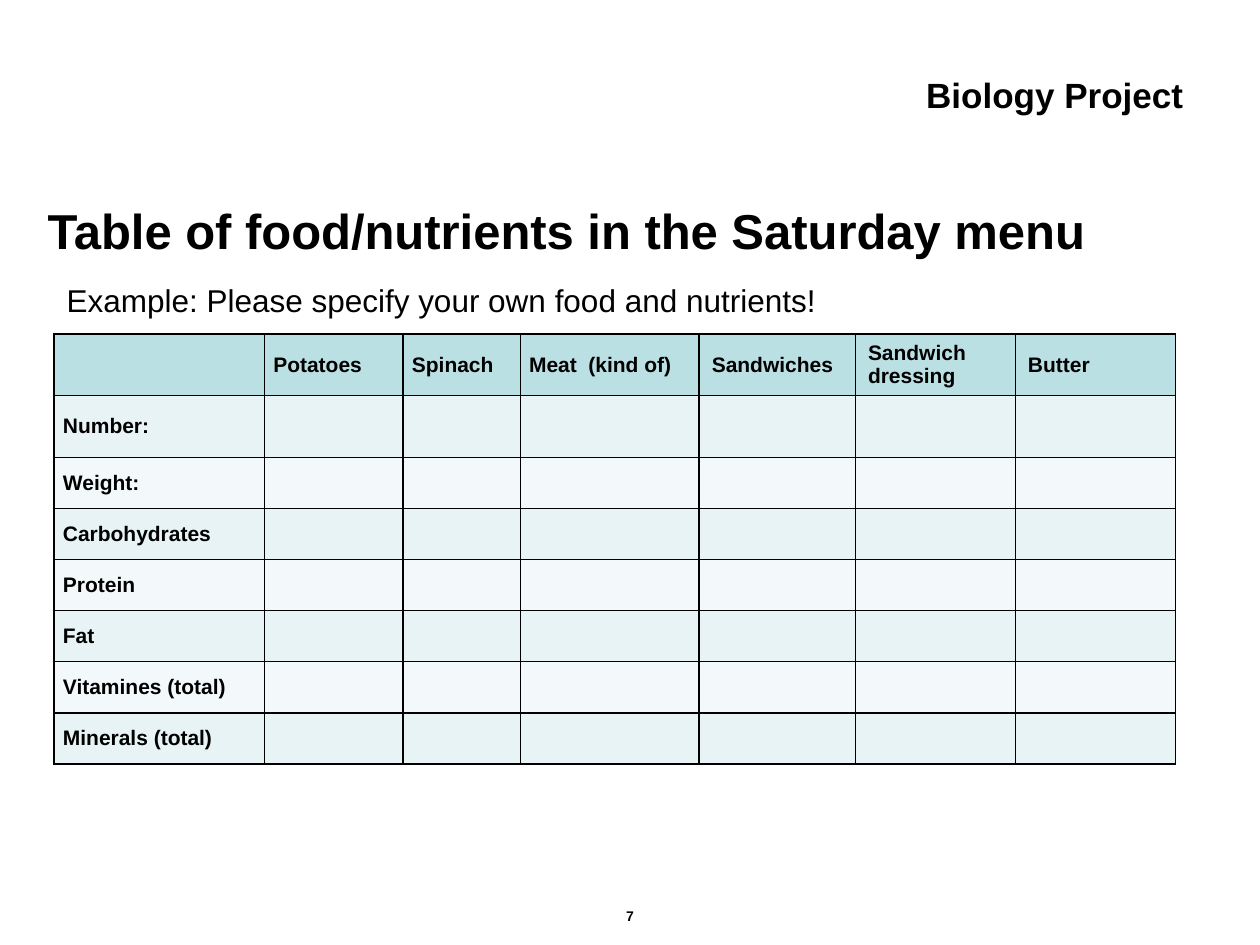
from dataclasses import dataclass

from lxml.etree import SubElement
from pptx import Presentation
from pptx.dml.color import RGBColor
from pptx.enum.text import MSO_ANCHOR, PP_ALIGN
from pptx.oxml.ns import qn
from pptx.util import Inches, Pt

SLIDE_WIDTH, SLIDE_HEIGHT = Inches(10), Inches(7.5)
FONT = "Arial"
BLACK = RGBColor(0x00, 0x00, 0x00)
HEADER_FILL = RGBColor(0xBB, 0xE0, 0xE3)
BAND_FILLS = (RGBColor(0xF3, 0xF9, 0xFA), RGBColor(0xE7, 0xF3, 0xF4))

FOODS = ("", "Potatoes", "Spinach", "Meat  (kind of)", "Sandwiches",
         "Sandwich dressing", "Butter")
NUTRIENTS = ("Number:", "Weight:", "Carbohydrates", "Protein", "Fat",
             "Vitamines (total)", "Minerals (total)")
COLUMN_WIDTHS = (1.67, 1.1, 0.93, 1.42, 1.24, 1.27, 1.27)
ROW_HEIGHTS = (0.49,) * 2 + (0.4,) * 6
NARROW_MARGIN_COLUMNS = 4


@dataclass
class Label:
    """A line of text; the box is given as percentages of the slide."""
    text: str
    left: float
    top: float
    width: float
    height: float
    size: int
    bold: bool = True
    align: PP_ALIGN = PP_ALIGN.LEFT
    anchor: MSO_ANCHOR = MSO_ANCHOR.TOP


LABELS = (
    Label("Table of food/nutrients in the Saturday menu",
          2.8, 18.53, 89.7, 11.6, 28, anchor=MSO_ANCHOR.MIDDLE),
    Label("Biology Project", 28, 7.07, 66.9, 5.2, 20, align=PP_ALIGN.RIGHT),
    Label("7", 5.1, 93.9, 89.8, 6.1, 8, align=PP_ALIGN.CENTER,
          anchor=MSO_ANCHOR.MIDDLE),
    Label("Example: Please specify your own food and nutrients!",
          4.3, 29.07, 88.2, 5.33, 18, bold=False),
)


def style_text(text_frame, size: int, bold: bool) -> None:
    for paragraph in text_frame.paragraphs:
        for run in paragraph.runs:
            run.font.name = FONT
            run.font.size = Pt(size)
            run.font.bold = bold
            run.font.color.rgb = BLACK


def add_label(slide, label: Label) -> None:
    shape = slide.shapes.add_textbox(
        int(SLIDE_WIDTH * label.left / 100), int(SLIDE_HEIGHT * label.top / 100),
        int(SLIDE_WIDTH * label.width / 100), int(SLIDE_HEIGHT * label.height / 100))
    text_frame = shape.text_frame
    text_frame.word_wrap = True
    text_frame.vertical_anchor = label.anchor
    text_frame.text = label.text
    text_frame.paragraphs[0].alignment = label.align
    style_text(text_frame, label.size, label.bold)


def add_borders(cell) -> None:
    """Black one-point lines on all sides; call before setting the fill."""
    properties = cell._tc.get_or_add_tcPr()
    for side in ("a:lnL", "a:lnR", "a:lnT", "a:lnB"):
        line = SubElement(properties, qn(side), w=str(Pt(1)))
        fill = SubElement(line, qn("a:solidFill"))
        SubElement(fill, qn("a:srgbClr"), val=str(BLACK))


def fill_cell(cell, text: str, color: RGBColor, narrow: bool) -> None:
    add_borders(cell)
    cell.fill.solid()
    cell.fill.fore_color.rgb = color
    cell.vertical_anchor = MSO_ANCHOR.MIDDLE
    if not text:
        return
    cell.text_frame.text = text
    style_text(cell.text_frame, 12, True)
    if narrow:
        cell.margin_left = cell.margin_right = Inches(0.07)
        cell.margin_top = cell.margin_bottom = 0


def add_nutrient_table(slide) -> None:
    rows = [FOODS] + [(name,) + ("",) * (len(FOODS) - 1) for name in NUTRIENTS]
    table = slide.shapes.add_table(
        len(rows), len(FOODS), Inches(0.43), Inches(2.65),
        Inches(sum(COLUMN_WIDTHS)), Inches(sum(ROW_HEIGHTS))).table
    for column, width in zip(table.columns, COLUMN_WIDTHS):
        column.width = Inches(width)
    for row, height in zip(table.rows, ROW_HEIGHTS):
        row.height = Inches(height)
    for row_index, texts in enumerate(rows):
        color = BAND_FILLS[row_index % 2] if row_index else HEADER_FILL
        for column_index, text in enumerate(texts):
            fill_cell(table.cell(row_index, column_index), text, color,
                      column_index < NARROW_MARGIN_COLUMNS)


def main() -> None:
    presentation = Presentation()
    presentation.slide_width = SLIDE_WIDTH
    presentation.slide_height = SLIDE_HEIGHT
    slide = presentation.slides.add_slide(presentation.slide_layouts[6])

    # Food and nutrient grid
    add_nutrient_table(slide)
    # Title, project name, page number and instruction
    for label in LABELS:
        add_label(slide, label)

    presentation.save("out.pptx")


if __name__ == "__main__":
    main()
